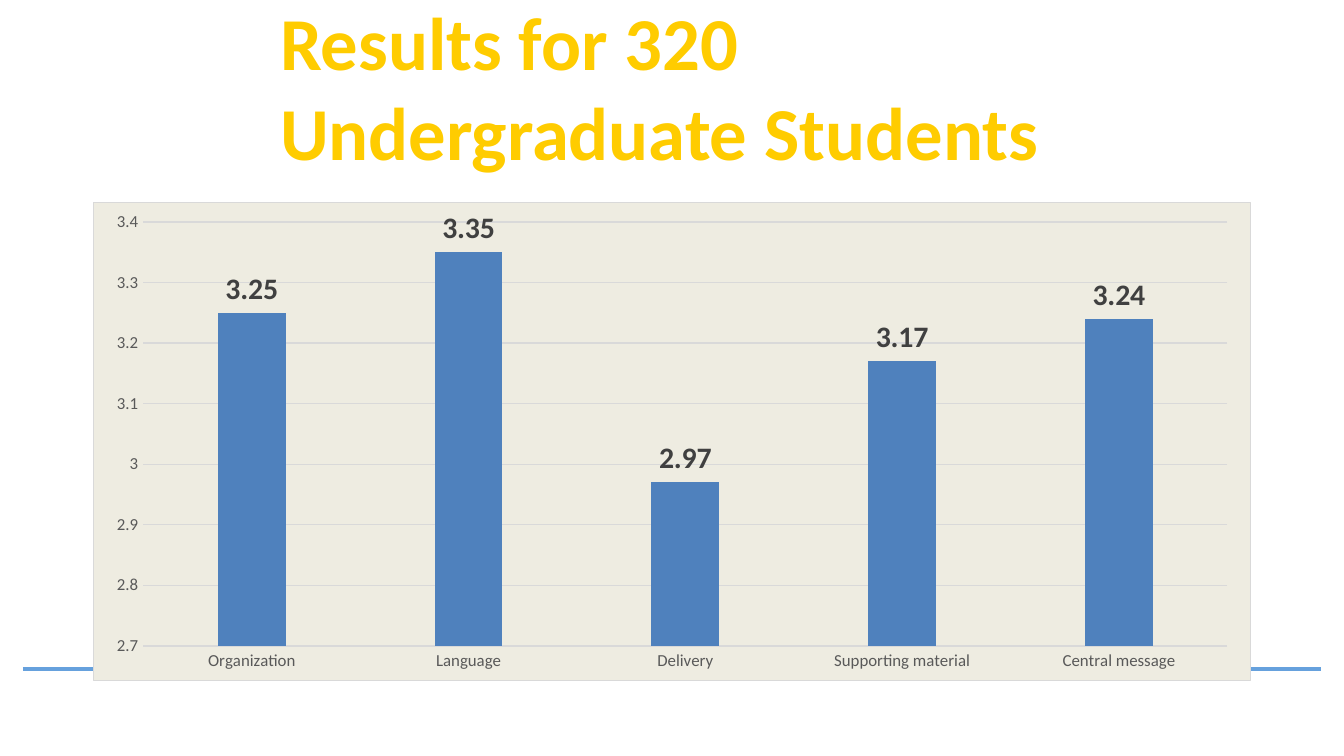
from dataclasses import dataclass

from lxml import etree
from pptx import Presentation
from pptx.chart.data import CategoryChartData
from pptx.dml.color import RGBColor
from pptx.enum import chart as charts, shapes, text
from pptx.oxml import parse_xml
from pptx.oxml.ns import nsdecls, qn
from pptx.util import Emu, Pt

PX_PER_INCH = 134.4


@dataclass(frozen=True)
class Theme:
    font: str = "Calibri"
    title: str = "FFCC00"
    rule: str = "66A1DD"
    panel: str = "EEECE1"
    grid: str = "D9D9D9"
    bar: str = "4F81BD"
    axis_text: str = "595959"
    label_text: str = "404040"
    title_size: int = 40
    label_size: int = 16
    axis_size: int = 9
    chart_size: int = 10
    rule_width: float = 2
    grid_width: float = 0.75


THEME = Theme()
SCORES = {
    "Organization": 3.25,
    "Language": 3.35,
    "Delivery": 2.97,
    "Supporting material": 3.17,
    "Central message": 3.24,
}


def px(length):
    return Emu(round(length * 914400 / PX_PER_INCH))


def style_font(font, size, color, bold=False):
    font.name = THEME.font
    font.size = Pt(size)
    font.bold = bold
    font.color.rgb = RGBColor.from_string(color)


def style_line(line, color, width):
    line.color.rgb = RGBColor.from_string(color)
    line.width = Pt(width)


def add_rule(slide, left, right, y):
    rule = slide.shapes.add_connector(
        shapes.MSO_CONNECTOR.STRAIGHT, px(left), px(y), px(right), px(y))
    style_line(rule.line, THEME.rule, THEME.rule_width)
    etree.SubElement(rule.element.spPr, qn("a:effectLst"))


def set_title(slide, wording, left, top, width, height):
    title = slide.shapes.title
    title.left, title.top = px(left), px(top)
    title.width, title.height = px(width), px(height)
    frame = title.text_frame
    frame.text = wording
    frame.word_wrap = True
    frame.auto_size = text.MSO_AUTO_SIZE.NONE
    frame.vertical_anchor = text.MSO_ANCHOR.TOP
    frame.margin_left = frame.margin_right = 0
    frame.margin_top = frame.margin_bottom = 0
    paragraph = frame.paragraphs[0]
    paragraph.alignment = text.PP_ALIGN.LEFT
    style_font(paragraph.font, THEME.title_size, THEME.title, bold=True)


def set_panel(chart):
    """Fill and outline the chart area, which has no public format."""
    panel = parse_xml(
        f'<c:spPr {nsdecls("c", "a")}>'
        f'<a:solidFill><a:srgbClr val="{THEME.panel}"/></a:solidFill>'
        f'<a:ln w="{Pt(THEME.grid_width)}"><a:solidFill>'
        f'<a:srgbClr val="{THEME.grid}"/></a:solidFill></a:ln></c:spPr>')
    chart._chartSpace.find(qn("c:chart")).addnext(panel)


def style_axes(chart):
    category, value = chart.category_axis, chart.value_axis
    for axis in (category, value):
        axis.major_tick_mark = axis.minor_tick_mark = charts.XL_TICK_MARK.NONE
        style_font(axis.tick_labels.font, THEME.axis_size, THEME.axis_text)
    style_line(category.format.line, THEME.grid, THEME.grid_width)
    value.format.line.fill.background()
    value.minimum_scale, value.maximum_scale = 2.7, 3.4
    value.major_unit = 0.1
    value.has_major_gridlines = True
    style_line(value.major_gridlines.format.line, THEME.grid, THEME.grid_width)


def style_bars(plot):
    plot.gap_width, plot.overlap = 219, -27
    plot.vary_by_categories = False
    series = plot.series[0]
    series.format.fill.solid()
    series.format.fill.fore_color.rgb = RGBColor.from_string(THEME.bar)
    labels = series.data_labels
    labels.show_value = True
    labels.position = charts.XL_LABEL_POSITION.OUTSIDE_END
    style_font(labels.font, THEME.label_size, THEME.label_text, bold=True)


def add_score_chart(slide, scores, left, top, width, height):
    data = CategoryChartData()
    data.categories = list(scores)
    data.add_series("Series 1", list(scores.values()))
    chart = slide.shapes.add_chart(
        charts.XL_CHART_TYPE.COLUMN_CLUSTERED,
        px(left), px(top), px(width), px(height), data).chart
    chart.has_title = chart.has_legend = False
    style_font(chart.font, THEME.chart_size, "000000")
    set_panel(chart)
    style_axes(chart)
    style_bars(chart.plots[0])


def main():
    presentation = Presentation()
    presentation.slide_width, presentation.slide_height = px(1344), px(756)
    slide = presentation.slides.add_slide(presentation.slide_layouts[5])

    # Footer rule, behind the chart
    add_rule(slide, 23, 1321, 669)

    # Mean score for each part of the presentation rubric
    add_score_chart(slide, SCORES, 93, 202, 1158, 479)

    # Heading
    set_title(slide, "Results for 320 Undergraduate Students", 280, -4, 930, 181)

    presentation.save("out.pptx")


if __name__ == "__main__":
    main()
